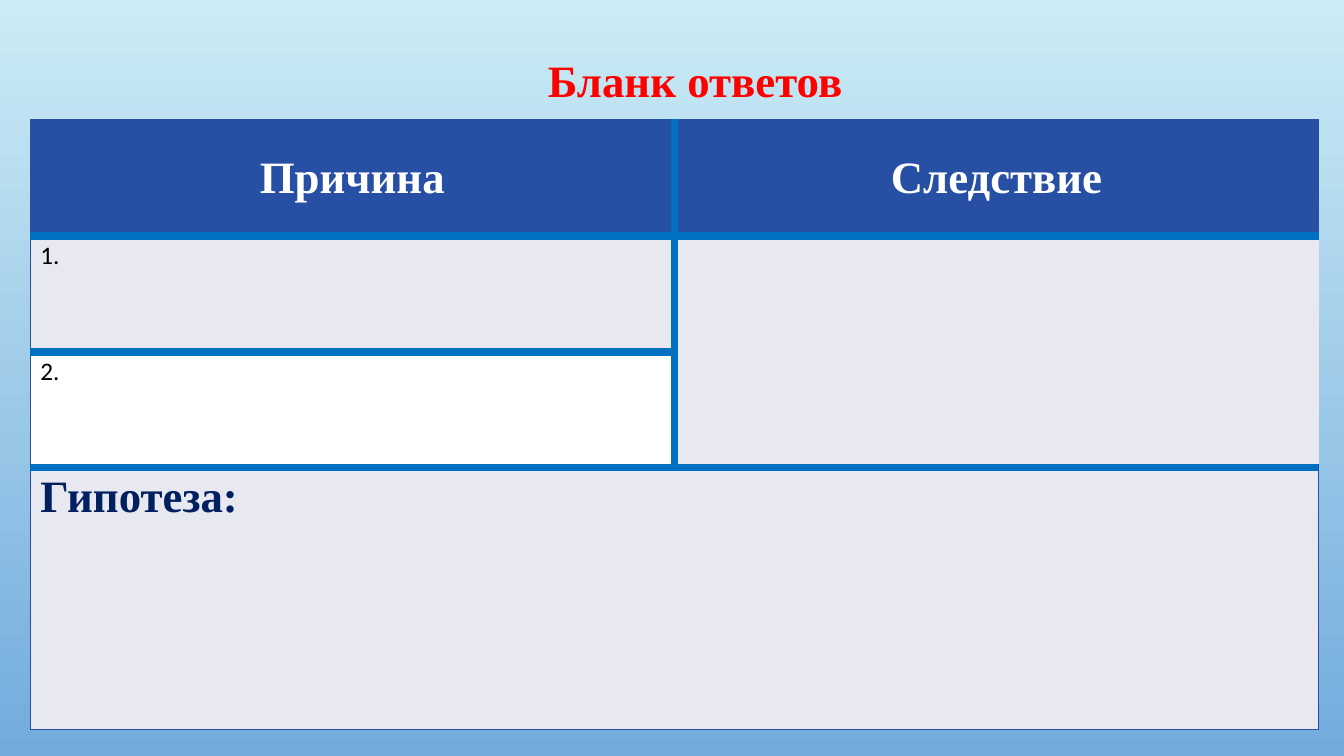
"""Build the answer sheet slide: causes, consequence and hypothesis."""
import pptx
import pptx.dml.color
import pptx.enum.text
import pptx.oxml.ns
import pptx.util
from lxml import etree

RGBColor = pptx.dml.color.RGBColor
Inches = pptx.util.Inches
RED = RGBColor(0xFF, 0x00, 0x00)
WHITE = RGBColor(0xFF, 0xFF, 0xFF)
BLACK = RGBColor(0x00, 0x00, 0x00)
NAVY = RGBColor(0x00, 0x20, 0x60)
HEADER_BLUE = RGBColor(0x27, 0x4F, 0xA4)
LINE_BLUE = RGBColor(0x00, 0x70, 0xC0)
PALE = RGBColor(0xE8, 0xE9, 0xF0)
SKY_TOP = RGBColor(0xCB, 0xEC, 0xF5)
SKY_BOTTOM = RGBColor(0x73, 0xAB, 0xDD)

TITLE = "Бланк ответов"
SERIF = "Times New Roman"
HEADER_STYLE = (SERIF, 32, True, WHITE)
NUMBER_STYLE = ("Calibri", 18, False, BLACK)
HYPOTHESIS_STYLE = (SERIF, 32, True, NAVY)
ROWS = [
    (["Причина", "Следствие"], HEADER_STYLE, [HEADER_BLUE, HEADER_BLUE]),
    (["1.", ""], NUMBER_STYLE, [PALE, PALE]),
    (["2.", ""], NUMBER_STYLE, [WHITE, PALE]),
    (["Гипотеза:", ""], HYPOTHESIS_STYLE, [PALE, PALE]),
]
MERGES = [((1, 1), (2, 1)), ((3, 0), (3, 1))]
ROW_HEIGHTS = [1.15, 1.15, 1.15, 2.6]
COLUMN_WIDTH = 6.39
LEFT, TOP = 0.3, 1.19
THIN, THICK = (HEADER_BLUE, 1), (LINE_BLUE, 6)


def style_text(para, style):
    for span in para.runs:
        span.font.name, size, span.font.bold, span.font.color.rgb = style
        span.font.size = pptx.util.Pt(size)


def add_border(properties, position, side, border):
    line = etree.Element(pptx.oxml.ns.qn(f"a:ln{side}"))
    properties.insert(position, line)
    if border is None:
        etree.SubElement(line, pptx.oxml.ns.qn("a:noFill"))
        return
    color, width = border
    line.set("w", str(pptx.util.Pt(width)))
    fill = etree.SubElement(line, pptx.oxml.ns.qn("a:solidFill"))
    etree.SubElement(fill, pptx.oxml.ns.qn("a:srgbClr"), val=str(color))


def add_borders(cell, row, column):
    last_row = row + cell.span_height == len(ROWS)
    last_column = column + cell.span_width == 2
    right = THICK
    if last_column:
        right = None if cell.span_height > 1 else THIN
    borders = {
        "L": THIN if column == 0 else THICK,
        "R": right,
        "T": THIN if row == 0 else THICK,
        "B": THIN if last_row else THICK,
    }
    properties = cell._tc.get_or_add_tcPr()
    for position, (side, border) in enumerate(borders.items()):
        add_border(properties, position, side, border)


def add_title(slide):
    title = slide.shapes.title
    title.left, title.top = Inches(1.23), Inches(0.47)
    title.width, title.height = Inches(11.33), Inches(TOP - 0.47)
    title.text_frame.text = TITLE
    title.text_frame.vertical_anchor = pptx.enum.text.MSO_ANCHOR.TOP
    para = title.text_frame.paragraphs[0]
    para.alignment = pptx.enum.text.PP_ALIGN.CENTER
    para.line_spacing = 1.0
    style_text(para, (SERIF, 32, True, RED))


def add_answer_table(slide):
    table = slide.shapes.add_table(
        len(ROWS), 2, Inches(LEFT), Inches(TOP),
        Inches(2 * COLUMN_WIDTH), Inches(sum(ROW_HEIGHTS))).table
    table.horz_banding = False
    for column in table.columns:
        column.width = Inches(COLUMN_WIDTH)
    for row, height in zip(table.rows, ROW_HEIGHTS):
        row.height = Inches(height)
    for start, end in MERGES:
        table.cell(*start).merge(table.cell(*end))
    for row, (texts, style, fills) in enumerate(ROWS):
        for column, (text, fill) in enumerate(zip(texts, fills)):
            cell = table.cell(row, column)
            cell.fill.solid()
            cell.fill.fore_color.rgb = fill
            if cell.is_spanned:
                continue
            cell.text_frame.text = text
            para = cell.text_frame.paragraphs[0]
            style_text(para, style)
            if row == 0:
                para.alignment = pptx.enum.text.PP_ALIGN.CENTER
                cell.vertical_anchor = pptx.enum.text.MSO_ANCHOR.MIDDLE
            if not cell.is_merge_origin:
                add_borders_to = (1, 1)
            add_borders(cell, row, column)


def main():
    deck = pptx.Presentation()
    deck.slide_width, deck.slide_height = Inches(13.33), Inches(7.5)
    slide = deck.slides.add_slide(deck.slide_layouts.get_by_name("Title Only"))
    sky = slide.background.fill
    sky.gradient()
    sky.gradient_angle = 270
    for stop, color in zip(sky.gradient_stops, (SKY_TOP, SKY_BOTTOM)):
        stop.color.rgb = color
    add_title(slide)
    add_answer_table(slide)
    deck.save("out.pptx")


if __name__ == "__main__":
    main()
